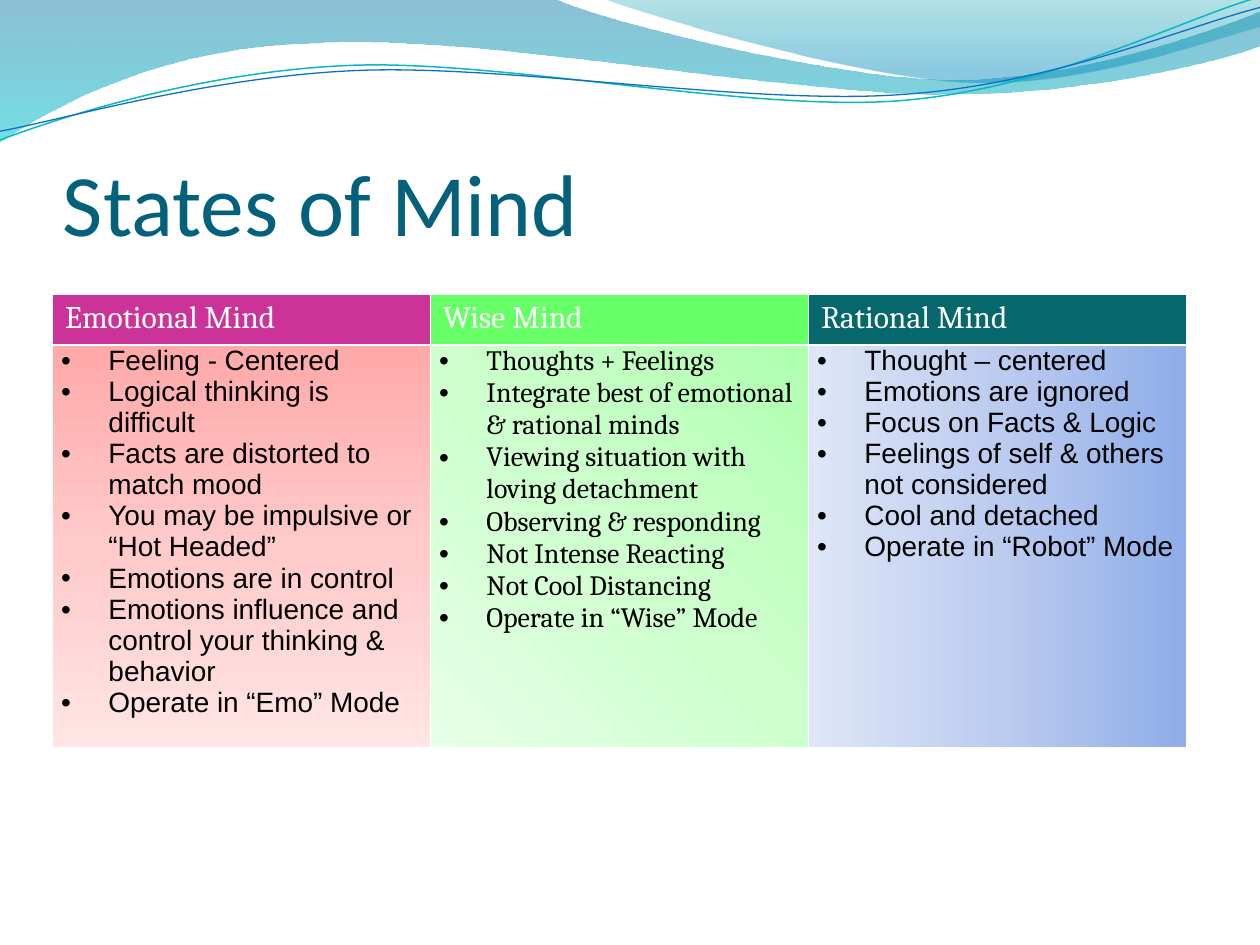
import math
import pptx
import pptx.util
import pptx.oxml
import pptx.oxml.ns
import pptx.dml.color
import pptx.enum.text

Pt = pptx.util.Pt
RGB = pptx.dml.color.RGBColor.from_string
qn = pptx.oxml.ns.qn
NS = pptx.oxml.ns.nsdecls("a")

theme = {
    "title": {"size": Pt(50), "name": "Calibri", "color": "04617B"},
    "head": {"size": Pt(18), "name": "Cambria", "color": "FFFFFF", "bold": False},
    "body": {"size": Pt(16), "name": "Arial", "color": "000000"},
    "rule": "FFFFFF",
    "wave": [(0, "0074A1", 45), (100, "00C6CF", 55)],
    "crest": [(0, "00A1A9", 30), (80, "008BBF", 45)],
    "teal": "0AB8BF",
    "blue": "0F6FC6",
}


def style(font, look):
    for key, val in look.items():
        if key == "color":
            font.color.rgb = RGB(val)
        else:
            setattr(font, key, val)


def shade(fill, node, stops, angle):
    """Gradient with any number of (place, colour, opacity) stops."""
    fill.gradient()
    grad = node.find(".//" + qn("a:gradFill"))
    marks = grad.find(qn("a:gsLst"))
    for old in list(marks):
        marks.remove(old)
    for place, color, alpha in stops:
        clear = f'<a:alpha val="{alpha * 1000}"/>' if alpha < 100 else ""
        marks.append(pptx.oxml.parse_xml(
            f'<a:gs {NS} pos="{place * 1000}">'
            f'<a:srgbClr val="{color}">{clear}</a:srgbClr></a:gs>'))
    lin = grad.find(qn("a:lin"))
    lin.set("ang", str(angle * 60000))
    lin.set("scaled", "0")


deck = pptx.Presentation()
deck.slide_width, deck.slide_height = Pt(720), Pt(540)
slide = deck.slides.add_slide(deck.slide_layouts[6])
shapes = slide.shapes

# Waves along the top: paint, line width, middle of the turn, steps.
# A step of 2 numbers is a line, of 6 a Bezier curve.
waves = [
    (theme["wave"], None, None, [
        (0, 0), (317, -0.7), (343, 12, 478, 45.4, 546, 45.4),
        (614, 45.4, 690, 18.7, 720, 6.5), (720.7, 26),
        (708, 31.7, 626, 54.7, 537, 54), (448, 54, 275, 20, 185, 24.5),
        (93, 26, 33, 59.8, -0.7, 81.4), (0, 0)]),
    (theme["crest"], None, None, [
        (345, -0.7), (366.5, 8, 491, 44.6, 553.7, 46.8),
        (616, 49.7, 692, 23, 720, 15), (720, 0), (345, -0.7)]),
    (theme["teal"], 0.85, (359.3, 41.4), [
        (0, 80), (34.6, 67, 113.8, 41, 199.4, 37.4),
        (284.4, 33.8, 427, 64, 513.4, 57.6),
        (599.8, 51, 675.4, 10.8, 718.6, -1.4)]),
    (theme["blue"], 0.75, (359.6, 42.5), [
        (0, 75), (33.8, 69, 118, 44, 203.8, 40.3),
        (290, 36.7, 430, 60.5, 516, 54),
        (602, 48.2, 677.5, 15, 720, 4.3)]),
]
tilt = 2.7
cos, sin = math.cos(math.radians(tilt)), math.sin(math.radians(tilt))
for paint, width, mid, steps in waves:
    spots = [spot for step in steps for spot in zip(step[::2], step[1::2])]
    if mid:
        gaps = [(x - mid[0], y - mid[1]) for x, y in spots]
        spots = [(mid[0] + x * cos - y * sin, mid[1] + x * sin + y * cos) for x, y in gaps]
    spots = [(Pt(x), Pt(y)) for x, y in spots]
    pen = shapes.build_freeform(*spots[0])
    pen.add_line_segments(spots[1:], close=not mid)
    wave = pen.convert_to_shape()
    wave.shadow.inherit = False

    # Turn each run of three points into one curve
    lines = iter(wave._element.findall(".//" + qn("a:lnTo")))
    for step in steps[1:]:
        line = next(lines)
        if len(step) == 6:
            curve = pptx.oxml.parse_xml(f"<a:cubicBezTo {NS}/>")
            line.addprevious(curve)
            for part in (line, next(lines), next(lines)):
                curve.append(part[0])
                part.getparent().remove(part)

    if mid:
        wave.rotation = 360 - tilt
        wave.fill.background()
        wave.line.color.rgb = RGB(paint)
        wave.line.width = Pt(width)
    else:
        shade(wave.fill, wave._element, paint, 90)
        wave.line.fill.background()

# Title
frame = shapes.add_textbox(Pt(36), Pt(55.4), Pt(648), Pt(90)).text_frame
look = {"word_wrap": True, "vertical_anchor": pptx.enum.text.MSO_ANCHOR.BOTTOM,
        "margin_left": 0, "margin_right": 0, "margin_top": Pt(3.6), "margin_bottom": 0}
for key, val in look.items():
    setattr(frame, key, val)
run = frame.paragraphs[0].add_run()
run.text = "States of Mind"
style(run.font, theme["title"])

# Table of the three minds: head, head fill, body font, gradient, angle, points
minds = [
    ("Emotional Mind", "CC3399", "Arial", ("FFA9A9", "FFCACA", "FFE5E5"), 90, [
        "Feeling - Centered", "Logical thinking is difficult",
        "Facts are distorted to match mood",
        "You may be impulsive or “Hot Headed”", "Emotions are in control",
        "Emotions influence and control your thinking & behavior",
        "Operate in “Emo” Mode"]),
    ("Wise Mind", "66FF66", "Cambria", ("AFFFAF", "CEFFCE", "E7FFE7"), 135, [
        "Thoughts + Feelings", "Integrate best of emotional & rational minds",
        "Viewing situation with loving detachment", "Observing & responding",
        "Not Intense Reacting", "Not Cool Distancing", "Operate in “Wise” Mode"]),
    ("Rational Mind", "06686C", "Arial", ("8FADE9", "BCCCEF", "DEE6F7"), 180, [
        "Thought – centered", "Emotions are ignored", "Focus on Facts & Logic",
        "Feelings of self & others not considered", "Cool and detached",
        "Operate in “Robot” Mode"]),
]
grid = shapes.add_table(2, 3, Pt(30), Pt(168), Pt(648), Pt(59))
table = grid.table
for row in table.rows:
    row.height = Pt(29.2)
grid.height = Pt(260)

for col, (name, color, face, tints, angle, notes) in enumerate(minds):
    table.columns[col].width = Pt(216)
    head, body = table.cell(0, col), table.cell(1, col)

    head.fill.solid()
    head.fill.fore_color.rgb = RGB(color)
    run = head.text_frame.paragraphs[0].add_run()
    run.text = name
    style(run.font, theme["head"])

    shade(body.fill, body._tc, [(p, c, 100) for p, c in zip((0, 50, 100), tints)], angle)
    look = {"margin_left": Pt(5), "margin_right": Pt(5), "margin_top": 0, "margin_bottom": 0}
    for key, val in look.items():
        setattr(body, key, val)
    frame = body.text_frame
    for i, note in enumerate(notes):
        para = frame.add_paragraph() if i else frame.paragraphs[0]
        run = para.add_run()
        run.text = note
        style(run.font, theme["body"] | {"name": face})
        props = para._p.get_or_add_pPr()
        props.set("marL", str(Pt(27)))
        props.set("indent", str(-Pt(27)))
        props.append(pptx.oxml.parse_xml(f'<a:buFont {NS} typeface="Arial"/>'))
        props.append(pptx.oxml.parse_xml(f'<a:buChar {NS} char="•"/>'))

    # Thin rules round the body cells
    props = body._tc.get_or_add_tcPr()
    for i, side in enumerate("LRTB"):
        props.insert(i, pptx.oxml.parse_xml(
            f'<a:ln{side} {NS} w="{Pt(1)}"><a:solidFill>'
            f'<a:srgbClr val="{theme["rule"]}"/></a:solidFill></a:ln{side}>'))

deck.save("out.pptx")
